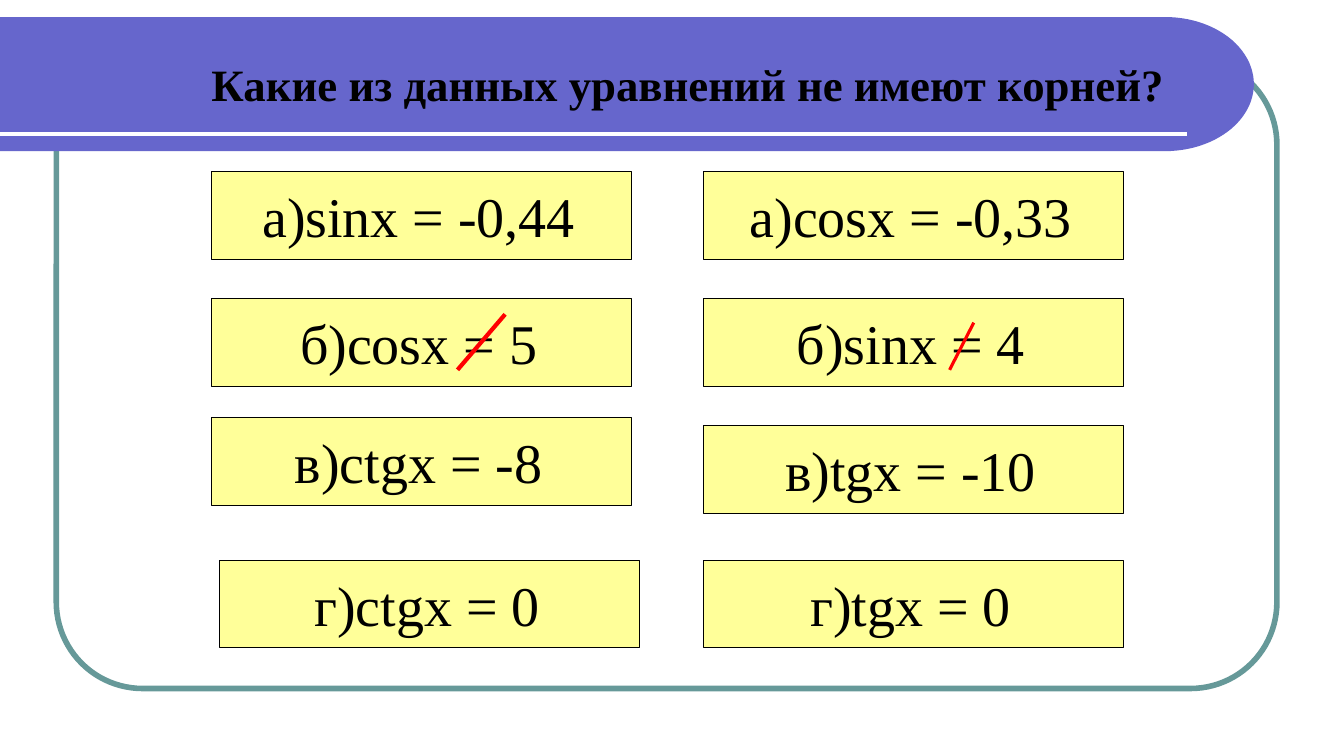
from math import cos, pi, sin

from lxml import etree
from pptx import Presentation
from pptx.dml.color import RGBColor
from pptx.enum.shapes import MSO_CONNECTOR as Connector, MSO_SHAPE as Shape
from pptx.enum.text import MSO_ANCHOR as Anchor, PP_ALIGN as Align
from pptx.oxml.ns import qn
from pptx.util import Cm, Pt

FONT = "Times New Roman"
BOX_WIDTH, BOX_HEIGHT = 10.59, 2.21
LEFT_COLUMN, RIGHT_COLUMN = 5.33, 17.73
EQUATIONS = [
    ("а)sinx = -0,44", LEFT_COLUMN, 4.32),
    ("б)cosx = 5", LEFT_COLUMN, 7.52),
    ("в)ctgx = -8", LEFT_COLUMN, 10.52),
    ("г)ctgx = 0", 5.54, 14.12),
    ("а)cosx = -0,33", RIGHT_COLUMN, 4.32),
    ("б)sinx = 4", RIGHT_COLUMN, 7.52),
    ("в)tgx = -10", RIGHT_COLUMN, 10.72),
    ("г)tgx = 0", RIGHT_COLUMN, 14.12),
]


def colour(value):
    return RGBColor.from_string(value)


def paint(shape, fill=None, line=None, weight=0.75):
    shape.shadow.inherit = False
    if fill:
        shape.fill.solid()
        shape.fill.fore_color.rgb = colour(fill)
    else:
        shape.fill.background()
    if line:
        shape.line.color.rgb = colour(line)
        shape.line.width = Pt(weight)
    else:
        shape.line.fill.background()


def write(shape, text, size, bold=False):
    shape.text_frame.text = text
    shape.text_frame.word_wrap = True
    paragraph = shape.text_frame.paragraphs[0]
    font = paragraph.runs[0].font
    font.name, font.size, font.bold = FONT, Pt(size), bold
    font.color.rgb = colour("000000")
    return paragraph


def add_frame(slide):
    frame = slide.shapes.add_shape(
        Shape.ROUNDED_RECTANGLE, Cm(1.42), Cm(1.47), Cm(30.76), Cm(15.88))
    frame.adjustments[0] = 0.137
    paint(frame, line="669999", weight=4)


def add_band(slide):
    top, straight, radius_x, radius_y = 0.43, 29.36, 2.24, 1.69
    steps = 48
    angles = [pi * step / steps - pi / 2 for step in range(steps + 1)]
    outline = [
        (Cm(straight + radius_x * cos(angle)),
         Cm(top + radius_y + radius_y * sin(angle)))
        for angle in angles
    ]
    builder = slide.shapes.build_freeform(Cm(0), Cm(top))
    builder.add_line_segments(outline + [(Cm(0), Cm(top + 2 * radius_y))])
    paint(builder.convert_to_shape(), fill="6666CC")


def add_line(slide, start, end, line, weight):
    connector = slide.shapes.add_connector(
        Connector.STRAIGHT, *(Cm(value) for value in start + end))
    connector.line.color.rgb = colour(line)
    connector.line.width = Pt(weight)
    etree.SubElement(connector._element.spPr, qn("a:effectLst"))


def add_title(slide, text):
    title = slide.shapes.add_textbox(Cm(4.24), Cm(1.19), Cm(25.7), Cm(2.39))
    write(title, text, 32, bold=True)
    title.text_frame.margin_left = Cm(1.09)
    title.text_frame.margin_right = Cm(0)
    title.text_frame.margin_top = Cm(0.25)


def add_equation(slide, text, left, top):
    box = slide.shapes.add_shape(
        Shape.RECTANGLE, Cm(left), Cm(top), Cm(BOX_WIDTH), Cm(BOX_HEIGHT))
    paint(box, fill="FFFF99", line="000000")
    write(box, text, 40).alignment = Align.CENTER
    box.text_frame.vertical_anchor = Anchor.MIDDLE
    box.text_frame.margin_right = Cm(0.4)


def main():
    presentation = Presentation()
    presentation.slide_width = Cm(33.87)
    presentation.slide_height = Cm(19.05)
    slide = presentation.slides.add_slide(presentation.slide_layouts[6])
    add_frame(slide)
    add_band(slide)
    add_line(slide, (0, 3.38), (29.92, 3.38), "FFFFFF", 3)
    add_title(slide, "Какие из данных уравнений не имеют корней?")
    for text, left, top in EQUATIONS:
        add_equation(slide, text, left, top)
    add_line(slide, (12.73, 7.92), (11.53, 9.32), "FF0000", 3)
    add_line(slide, (24.54, 8.13), (23.93, 9.32), "FF0000", 2.25)
    presentation.save("out.pptx")


if __name__ == "__main__":
    main()
